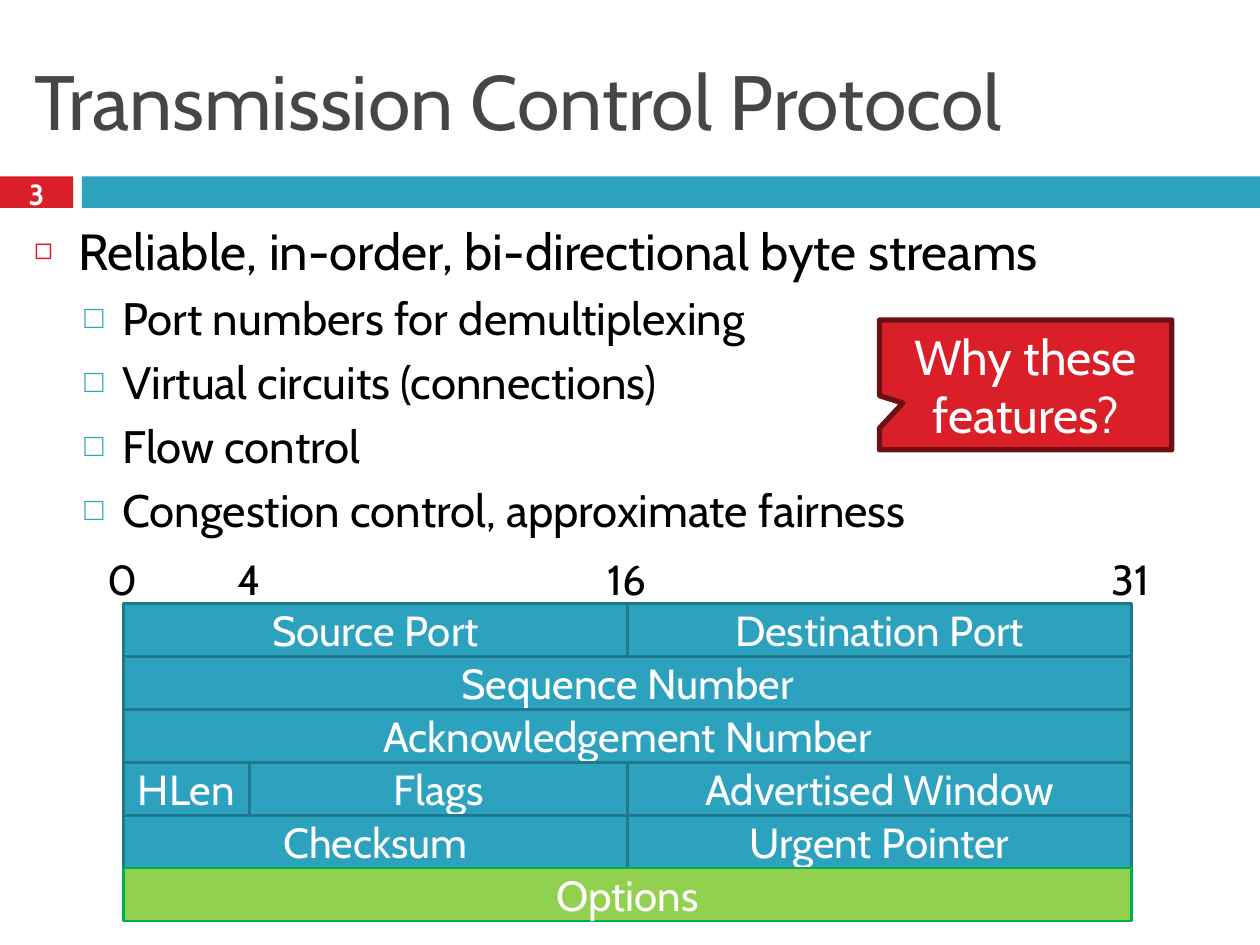
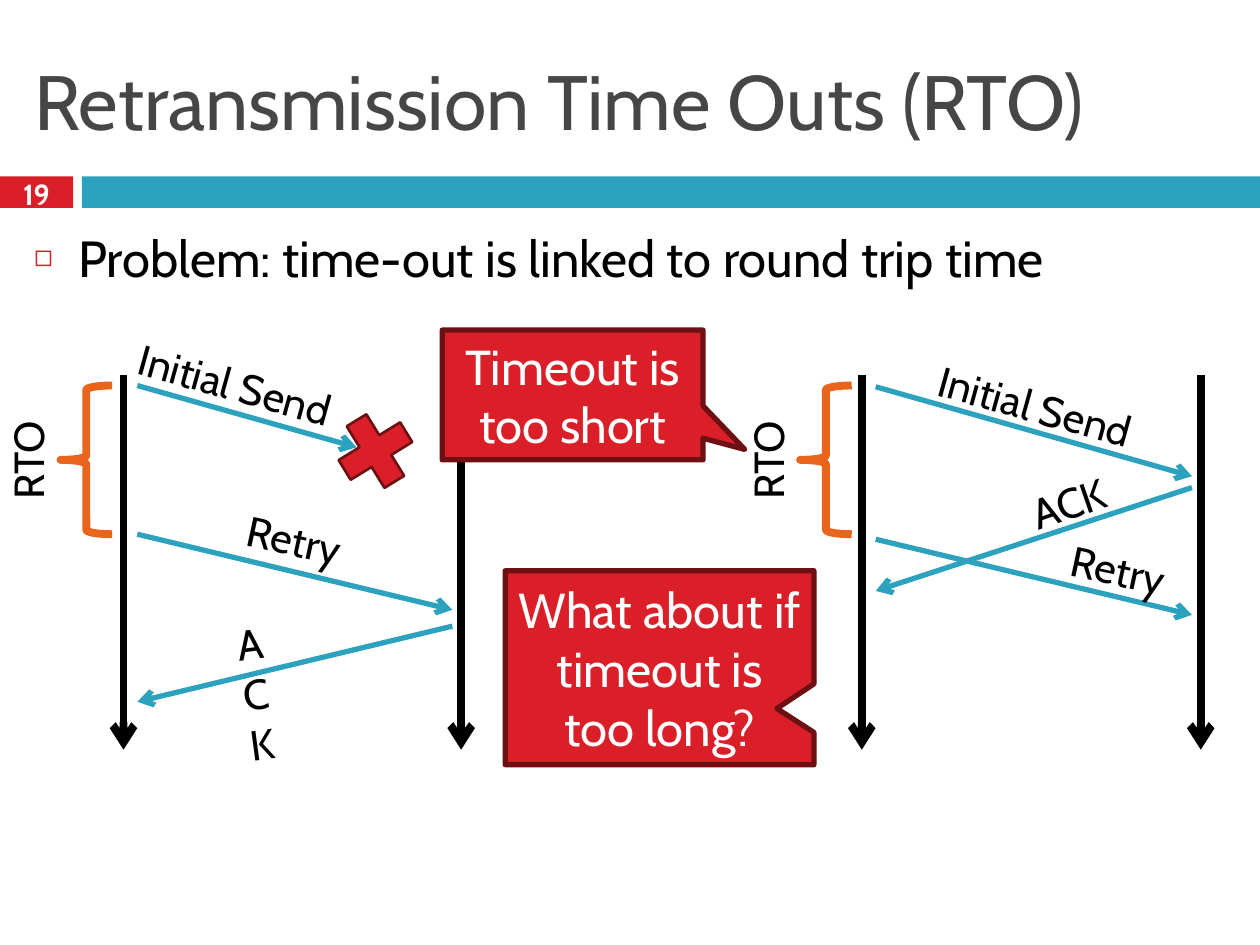
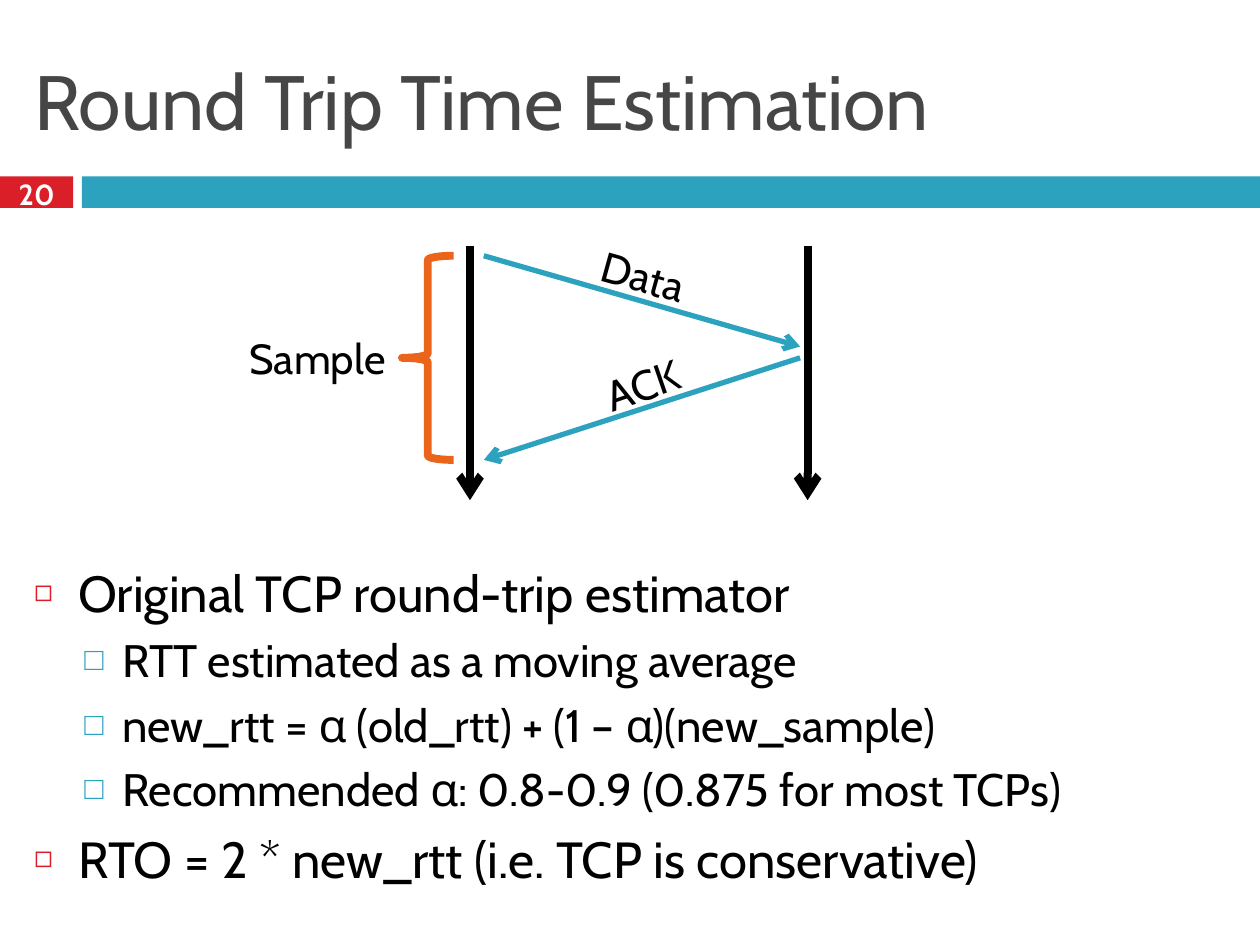
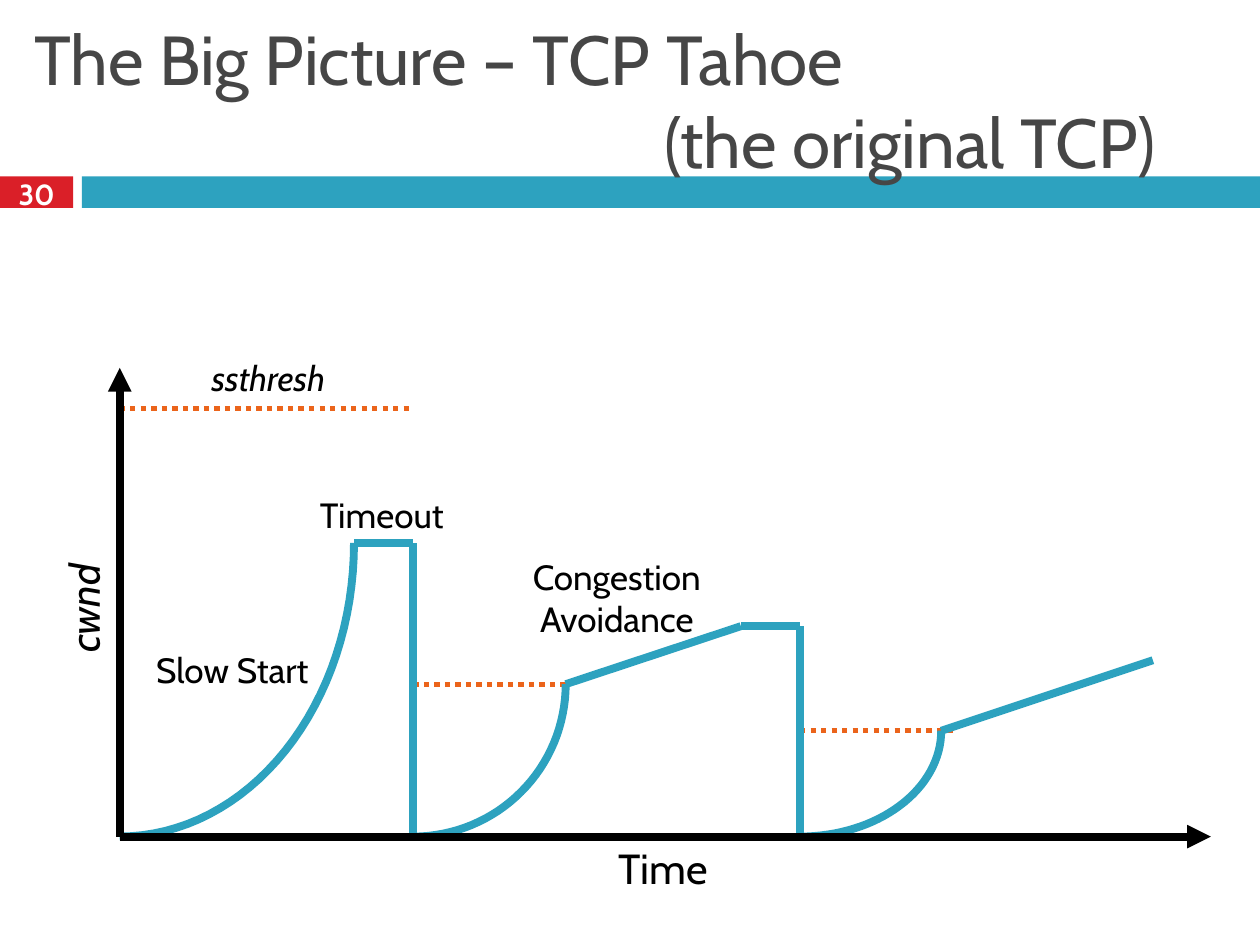
from itertools import pairwise
from math import cos, pi, sin

from pptx import Presentation
from pptx.dml.color import RGBColor
from pptx.enum.dml import MSO_LINE
from pptx.enum.shapes import MSO_CONNECTOR, MSO_SHAPE
from pptx.enum.text import MSO_ANCHOR as ANCHOR, MSO_AUTO_SIZE as AUTO, PP_ALIGN as ALIGN
from pptx.oxml.ns import qn
from pptx.util import Inches, Pt

FONT = "Cabin"
WHITE = RGBColor(0xFF, 0xFF, 0xFF)
BLACK = RGBColor(0, 0, 0)
GREY = RGBColor(0x46, 0x46, 0x46)
TEAL = RGBColor(0x2D, 0xA2, 0xBF)
DARK_TEAL = RGBColor(0x21, 0x78, 0x8D)
RED = RGBColor(0xDA, 0x1F, 0x28)
DARK_RED = RGBColor(0x6D, 0x10, 0x14)
ORANGE = RGBColor(0xEB, 0x64, 0x1B)
LIME = RGBColor(0x92, 0xD0, 0x50)
GREEN = RGBColor(0x00, 0xB0, 0x50)

TITLE_CONTENT, TITLE_ONLY = 1, 5
MARGIN, CONTENT_W = 0.17, 9.67
BAND_TOP, BAND_H, NUMBER_W, BAND_LEFT = 1.4, 0.25, 0.58, 0.65

# size, left margin, hanging indent, space before, bullet, its colour and size
LEVELS = [
    (29, 0.35, -0.35, 7, "◻", RED, 60),
    (26, 0.7, -0.3, 5.5, "□", TEAL, 70),
]

# TCP header grid: 32 bit columns, one row per word
BIT, ROW = 0.25, 0.42
HEADER_LEFT, HEADER_TOP = 0.98, 4.79
FIELDS = [  # row, first bit, bits, name
    (0, 0, 16, "Source Port"), (0, 16, 16, "Destination Port"),
    (1, 0, 32, "Sequence Number"),
    (2, 0, 32, "Acknowledgement Number"),
    (3, 0, 4, "HLen"), (3, 4, 12, "Flags"), (3, 16, 16, "Advertised Window"),
    (4, 0, 16, "Checksum"), (4, 16, 16, "Urgent Pointer"),
    (5, 0, 32, "Options"),
]
BIT_MARKS = [(0, "0"), (4, "4"), (16, "16"), (32, "31")]

# Congestion window plot
ORIGIN_X, ORIGIN_Y = 0.95, 6.64
CYCLES = [  # start, ssthresh, ssthresh end, window after slow start
    (ORIGIN_X, 3.24, 3.28, [(2.81, 4.31), (3.28, 4.31), (3.28, ORIGIN_Y)]),
    (3.28, 5.43, 4.49,
     [(4.49, 5.43), (5.88, 4.97), (6.35, 4.97), (6.35, ORIGIN_Y)]),
    (6.35, 5.8, 7.56, [(7.47, 5.8), (9.15, 5.24)]),
]


def inches(values):
    return [Inches(v) for v in values]


def add_run(p, text, size, color=BLACK, bold=False, italic=False):
    r = p.add_run()
    r.text = text
    r.font.name, r.font.size = FONT, Pt(size)
    r.font.color.rgb = color
    r.font.bold, r.font.italic = bold, italic


def set_indent(p, left, hanging):
    pPr = p._p.get_or_add_pPr()
    pPr.set("marL", str(Inches(left)))
    pPr.set("indent", str(Inches(hanging)))
    return pPr


def add_shape(s, kind, box, fill=None, line=None, width=1.5):
    sp = s.shapes.add_shape(kind, *inches(box))
    sp.shadow.inherit = False
    paint(sp, fill, line, width)
    return sp


def paint(sp, fill, line, width):
    if fill is None:
        sp.fill.background()
    else:
        sp.fill.solid()
        sp.fill.fore_color.rgb = fill
    if line is None:
        sp.line.fill.background()
    else:
        sp.line.color.rgb = line
        sp.line.width = Pt(width)


def shape_text(sp, text, size):
    tf = sp.text_frame
    tf.word_wrap = True
    tf.vertical_anchor = ANCHOR.MIDDLE
    p = tf.paragraphs[0]
    p.alignment = ALIGN.CENTER
    add_run(p, text, size, WHITE)


def add_label(s, box, *lines, size=24, angle=0, align=ALIGN.CENTER, wrap=True,
              grow=True, color=BLACK, bold=False, italic=False):
    """Text box; a growing one starts at the top, a fixed one is centred."""
    sp = s.shapes.add_textbox(*inches(box))
    sp.rotation = angle
    tf = sp.text_frame
    tf.word_wrap = wrap
    tf.auto_size = AUTO.SHAPE_TO_FIT_TEXT if grow else AUTO.NONE
    tf.vertical_anchor = ANCHOR.TOP if grow else ANCHOR.MIDDLE
    for i, text in enumerate(lines):
        p = tf.add_paragraph() if i else tf.paragraphs[0]
        p.alignment = align
        add_run(p, text, size, color, bold, italic)
    return tf


def add_line(s, start, end, color, width, arrow=None, dash=None):
    c = s.shapes.add_connector(MSO_CONNECTOR.STRAIGHT, *inches((*start, *end)))
    c.line.color.rgb = color
    c.line.width = Pt(width)
    if dash:
        c.line.dash_style = dash
    spPr = c._element.spPr
    if arrow:
        ln = spPr.find(qn("a:ln"))
        ln.append(ln.makeelement(qn("a:tailEnd"), {"type": arrow}))
    spPr.append(spPr.makeelement(qn("a:effectLst"), {}))


def add_timeline(s, x, top, bottom):
    add_line(s, (x, top), (x, bottom), BLACK, 4.5, "arrow")


def add_message(s, start, end, text, box, angle, align=ALIGN.CENTER):
    add_line(s, start, end, TEAL, 3, "arrow")
    add_label(s, box, text, angle=angle, align=align)


def add_brace(s, left, top, height, text, text_box, angle=0):
    add_shape(s, MSO_SHAPE.LEFT_BRACE, (left, top, 0.41, height), line=ORANGE, width=4.5)
    add_label(s, text_box, text, angle=angle)


def add_callout(s, box, tip, text):
    """tip: pointer end from the centre, as shares of width and height."""
    sp = add_shape(s, MSO_SHAPE.RECTANGULAR_CALLOUT, box, RED, DARK_RED, 3)
    sp.adjustments[0], sp.adjustments[1] = tip
    shape_text(sp, text, 28)


def add_curve(s, left, right, top):
    """Quarter ellipse rising from the time axis to (right, top)."""
    steps = 32
    points = []
    for i in range(steps + 1):
        a = pi / 2 * i / steps
        points.append(inches((left + (right - left) * cos(a),
                              top + (ORIGIN_Y - top) * sin(a))))
    fb = s.shapes.build_freeform(*points[0])
    fb.add_line_segments(points[1:], close=False)
    sp = fb.convert_to_shape()
    sp.shadow.inherit = False
    paint(sp, None, TEAL, 4.5)


def add_bullets(s, box, items):
    body = s.placeholders[1]
    body.left, body.top, body.width, body.height = inches(box)
    tf = body.text_frame
    tf.auto_size = AUTO.NONE
    for i, (level, text) in enumerate(items):
        size, left, hanging, before, char, color, share = LEVELS[level]
        p = tf.add_paragraph() if i else tf.paragraphs[0]
        p.level = level
        p.space_before = Pt(before)
        pPr = set_indent(p, left, hanging)
        clr = pPr.makeelement(qn("a:buClr"), {})
        clr.append(clr.makeelement(qn("a:srgbClr"), {"val": str(color)}))
        pPr.append(clr)
        pPr.append(pPr.makeelement(qn("a:buSzPct"), {"val": str(share * 1000)}))
        pPr.append(pPr.makeelement(qn("a:buChar"), {"char": char}))
        add_run(p, text, size)


def add_slide(prs, layout, number, *title, size=44):
    s = prs.slides.add_slide(prs.slide_layouts[layout])
    tf = s.shapes.title.text_frame
    tf.auto_size = AUTO.NONE
    tf.vertical_anchor = ANCHOR.MIDDLE
    p = tf.paragraphs[0]
    p.alignment = ALIGN.LEFT
    for i, text in enumerate(title):
        if i:
            p.add_line_break()
            set_indent(p, 5, -5)
        add_run(p, text, size, GREY)
    add_label(s, (0, BAND_TOP - 0.03, NUMBER_W, 0.33), str(number), size=16.6,
              grow=False, color=WHITE, bold=True)
    return s


def set_up_master(prs, s):
    """Place the master title and move the two bands, drawn on s, to the master."""
    master = prs.slide_master
    title = master.placeholders[0]
    title.left, title.top, title.width, title.height = inches((MARGIN, 0.25, CONTENT_W, 1.08))
    bands = [(0, NUMBER_W, RED), (BAND_LEFT, 10 - BAND_LEFT, TEAL)]
    for i, (left, width, color) in enumerate(bands):
        band = add_shape(s, MSO_SHAPE.RECTANGLE, (left, BAND_TOP, width, BAND_H), color)
        band._element.nvSpPr.cNvPr.set("id", str(20 + i))
        master.shapes._spTree.insert(2 + i, band._element)


def header_slide(prs):
    s = add_slide(prs, TITLE_CONTENT, 3, "Transmission Control Protocol")
    set_up_master(prs, s)
    add_bullets(s, (MARGIN, 1.69, CONTENT_W, 2.73), [
        (0, "Reliable, in-order, bi-directional byte streams"),
        (1, "Port numbers for demultiplexing"),
        (1, "Virtual circuits (connections)"),
        (1, "Flow control"),
        (1, "Congestion control, approximate fairness"),
    ])
    for row, first, bits, name in FIELDS:
        fill, line = (LIME, GREEN) if name == "Options" else (TEAL, DARK_TEAL)
        box = (HEADER_LEFT + first * BIT, HEADER_TOP + row * ROW, bits * BIT, ROW)
        shape_text(add_shape(s, MSO_SHAPE.RECTANGLE, box, fill, line), name, 24)
    for bit, mark in BIT_MARKS:
        add_label(s, (HEADER_LEFT + bit * BIT - 0.33, 4.26, 0.65, 0.66), mark, grow=False)
    add_callout(s, (6.98, 2.54, 2.32, 1.03), (-0.42, 0.14), "Why these features?")


def timeout_slide(prs):
    s = add_slide(prs, TITLE_CONTENT, 19, "Retransmission Time Outs (RTO)")
    add_bullets(s, (MARGIN, 1.75, CONTENT_W, 1.82),
                [(0, "Problem: time-out is linked to round trip time")])
    for x in (0.98, 3.66, 6.84, 9.53):
        add_timeline(s, x, 2.98, 5.95)
    for left in (0.48, 6.35):
        add_brace(s, left, 3.06, 1.18, "RTO", (left - 0.79, 3.4, 1.07, 0.5), 270)

    add_message(s, (1.09, 3.06), (2.83, 3.55), "Initial Send", (0.77, 2.8, 2.19, 0.5), 15.6)
    add_message(s, (3.59, 4.97), (1.09, 5.57), "ACK", (1.78, 4.85, 0.5, 0.5), 352.2, ALIGN.LEFT)
    add_message(s, (1.09, 4.24), (3.59, 4.84), "Retry", (1.78, 4.03, 1.11, 0.5), 12.3)
    cross = add_shape(s, MSO_SHAPE.MATH_MULTIPLY, (2.59, 3.19, 0.78, 0.78), RED, DARK_RED)
    cross.rotation = 13.5

    add_message(s, (6.95, 3.07), (9.46, 3.78), "Initial Send", (7.12, 2.97, 2.19, 0.5), 15.6)
    add_message(s, (9.46, 3.87), (6.95, 4.69), "ACK", (7.9, 3.74, 1.16, 0.5), 341)
    add_message(s, (6.95, 4.28), (9.46, 4.88), "Retry", (8.32, 4.27, 1.11, 0.5), 12.3)

    add_callout(s, (3.51, 2.62, 2.07, 1.03), (0.66, 0.42), "Timeout is too short")
    add_callout(s, (4.01, 4.53, 2.45, 1.54), (0.38, 0.21), "What about if timeout is too long?")


def estimation_slide(prs):
    s = add_slide(prs, TITLE_CONTENT, 20, "Round Trip Time Estimation")
    add_bullets(s, (MARGIN, 4.41, CONTENT_W, 2.93), [
        (0, "Original TCP round-trip estimator"),
        (1, "RTT estimated as a moving average"),
        (1, "new_rtt = α (old_rtt) + (1 – α)(new_sample)"),
        (1, "Recommended α: 0.8-0.9 (0.875 for most TCPs)"),
        (0, "RTO = 2 * new_rtt (i.e. TCP is conservative)"),
    ])
    for x in (3.73, 6.41):
        add_timeline(s, x, 1.95, 3.97)
    add_message(s, (3.84, 2.03), (6.35, 2.75), "Data", (4.01, 1.94, 2.19, 0.5), 15.6)
    add_message(s, (6.35, 2.84), (3.84, 3.65), "ACK", (4.52, 2.8, 1.16, 0.5), 341)
    add_brace(s, 3.19, 2.03, 1.62, "Sample", (1.78, 2.59, 1.48, 0.5))


def tahoe_slide(prs):
    s = add_slide(prs, TITLE_ONLY, 30, "The Big Picture – TCP Tahoe",
                  "(the original TCP)", size=39.6)
    for start, threshold, end, _ in CYCLES:
        add_line(s, (start, threshold), (end, threshold), ORANGE, 3, dash=MSO_LINE.ROUND_DOT)
    for start, _, _, window in CYCLES:
        add_curve(s, start, *window[0])
        for a, b in pairwise(window):
            add_line(s, a, b, TEAL, 4.5)
    for end in ((ORIGIN_X, 2.92), (9.61, ORIGIN_Y)):
        add_line(s, (ORIGIN_X, ORIGIN_Y), end, BLACK, 4.5, "triangle")

    free = {"wrap": False, "align": ALIGN.LEFT}
    add_label(s, (4.81, 6.64, 0.94, 0.51), "Time", **free)
    add_label(s, (0.17, 4.53, 0.99, 0.51), "cwnd", angle=270, italic=True, **free)
    add_label(s, (2.44, 3.87, 1.21, 0.44), "Timeout", size=20, **free)
    add_label(s, (1.14, 5.1, 1.48, 0.44), "Slow Start", size=20, **free)
    tf = add_label(s, (4.13, 4.36, 1.62, 0.77), "Congestion", "Avoidance", size=20, **free)
    tf.paragraphs[1].alignment = ALIGN.CENTER
    add_label(s, (1.5, 2.78, 1.26, 0.44), "ssthresh", size=20, italic=True, wrap=False)


def main():
    prs = Presentation()
    prs.slide_width, prs.slide_height = Inches(10), Inches(7.5)
    header_slide(prs)
    timeout_slide(prs)
    estimation_slide(prs)
    tahoe_slide(prs)
    prs.save("out.pptx")


if __name__ == "__main__":
    main()
